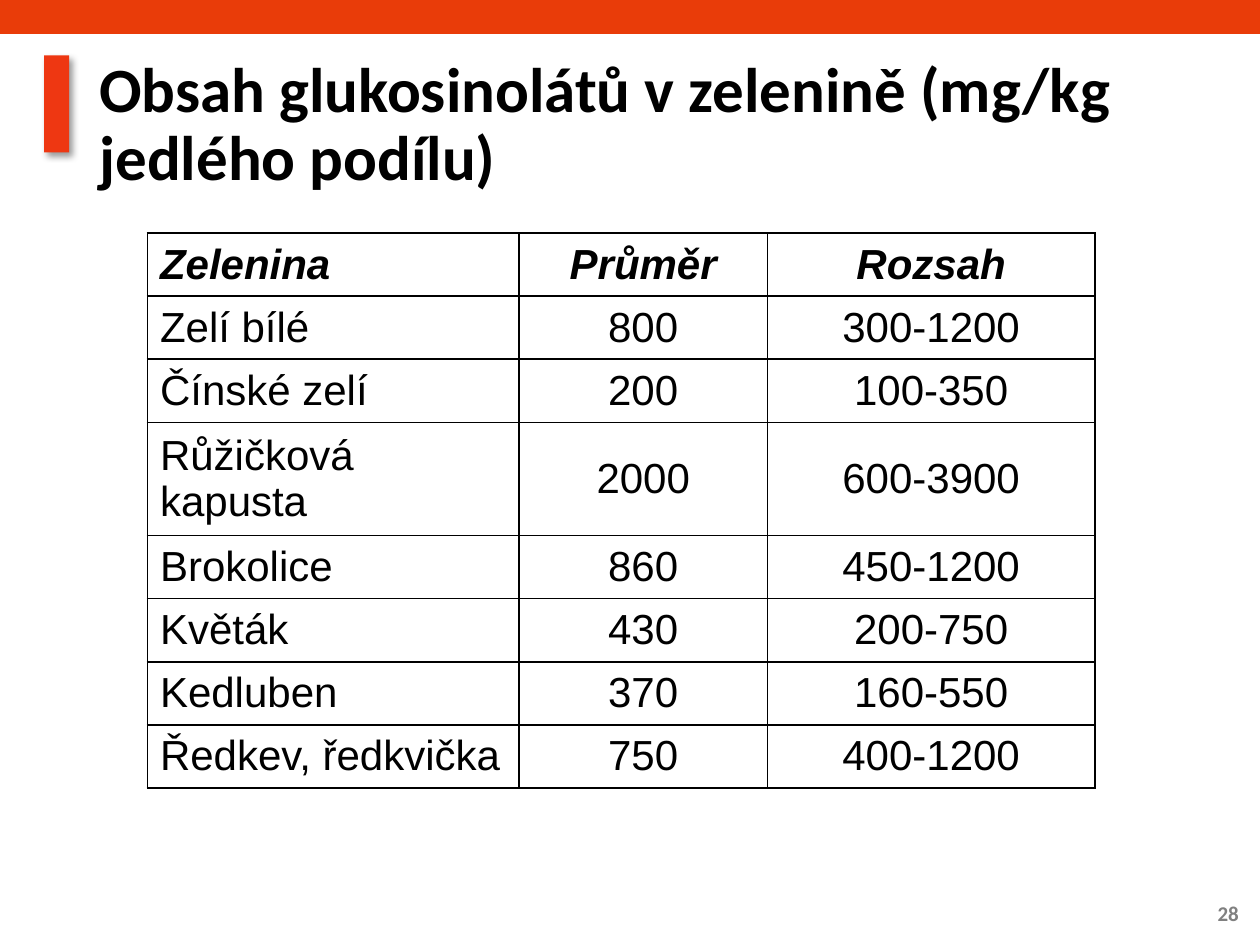
from lxml import etree
from pptx import Presentation
from pptx import util as u
from pptx.dml.color import RGBColor
from pptx.enum import shapes, text
from pptx.oxml import parse_xml
from pptx.oxml.ns import nsdecls, qn

COLORS = {"band": "E93C09", "marker": "EE3712", "ink": "000000", "page": "808080"}
COLS, ROWS = 100, 75
TITLE = {"name": "Calibri", "size": u.Pt(36), "bold": True}
PAGE = {"name": "Calibri", "size": u.Pt(12), "bold": True}
BODY = {"name": "Arial", "size": u.Pt(24), "bold": False, "italic": False}
HEAD = {**BODY, "bold": True, "italic": True}
LEFT, CENTER, RIGHT = text.PP_ALIGN.LEFT, text.PP_ALIGN.CENTER, text.PP_ALIGN.RIGHT

VEGETABLES = [
    ("Zelenina", "Průměr", "Rozsah"),
    ("Zelí bílé", "800", "300-1200"),
    ("Čínské zelí", "200", "100-350"),
    ("Růžičková kapusta", "2000", "600-3900"),
    ("Brokolice", "860", "450-1200"),
    ("Květák", "430", "200-750"),
    ("Kedluben", "370", "160-550"),
    ("Ředkev, ředkvička", "750", "400-1200"),
]


class Deck:
    """Hold the style and current slide, measured in grid columns and rows."""

    def __init__(self):
        self.prs = Presentation()
        self.prs.slide_width, self.prs.slide_height = u.Inches(10), u.Inches(7.5)
        self.s = self.prs.slides.add_slide(self.prs.slide_layouts[6])

    def x(self, cols):
        return round(self.prs.slide_width * cols / COLS)

    def y(self, rows):
        return round(self.prs.slide_height * rows / ROWS)

    def box(self, left, top, width, height):
        return self.x(left), self.y(top), self.x(width), self.y(height)

    def add_words(self, tf, words, font, color="ink", align=LEFT, spacing=1.0):
        p = tf.paragraphs[0]
        p.alignment, p.line_spacing = align, spacing
        r = p.add_run()
        r.text = words
        for key, value in font.items():
            setattr(r.font, key, value)
        r.font.color.rgb = RGBColor.from_string(COLORS[color])

    def bar(self, area, color, shadow=False):
        sp = self.s.shapes.add_shape(shapes.MSO_SHAPE.RECTANGLE, *self.box(*area))
        sp.fill.solid()
        sp.fill.fore_color.rgb = RGBColor.from_string(COLORS[color])
        sp.line.fill.background()
        sp.shadow.inherit = False
        if shadow:
            effects = sp._element.spPr.find(qn("a:effectLst"))
            effects.append(parse_xml(
                f'<a:outerShdw {nsdecls("a")} blurRad="{u.Pt(4)}" dist="{u.Pt(3)}" '
                f'dir="{45 * 60000}" algn="tl" rotWithShape="0">'
                f'<a:srgbClr val="{COLORS["ink"]}"><a:alpha val="40000"/></a:srgbClr>'
                '</a:outerShdw>'))

    def label(self, area, words, font, **style):
        tf = self.s.shapes.add_textbox(*self.box(*area)).text_frame
        tf.word_wrap = True
        tf.vertical_anchor = text.MSO_ANCHOR.MIDDLE
        self.add_words(tf, words, font, **style)

    def border(self, cell):
        tc_pr = cell._tc.get_or_add_tcPr()
        for i, side in enumerate(("lnL", "lnR", "lnT", "lnB")):
            ln = etree.Element(qn(f"a:{side}"), w=str(u.Pt(1)))
            fill = etree.SubElement(ln, qn("a:solidFill"))
            etree.SubElement(fill, qn("a:srgbClr"), val=COLORS["ink"])
            tc_pr.insert(i, ln)

    def table(self, left, top, widths, heights, rows):
        area = self.box(left, top, sum(widths), sum(heights))
        table = self.s.shapes.add_table(len(rows), len(widths), *area).table
        table.first_row = table.horz_banding = False
        for col, width in zip(table.columns, widths):
            col.width = self.x(width)
        for i, (row, height) in enumerate(zip(table.rows, heights)):
            row.height = self.y(height)
            for j, cell in enumerate(row.cells):
                cell.fill.background()
                cell.vertical_anchor = text.MSO_ANCHOR.MIDDLE
                self.add_words(cell.text_frame, rows[i][j], BODY if i else HEAD,
                               align=CENTER if j else LEFT)
                self.border(cell)


def main():
    deck = Deck()
    deck.bar((0, 0, COLS, 2.7), "band")
    deck.bar((3.5, 4.4, 2, 7.7), "marker", shadow=True)
    deck.label((92.5, 70.5, 6.8, 4), "28", PAGE, color="page", align=RIGHT)
    heights = [9 if row[0] == "Růžičková kapusta" else 5 for row in VEGETABLES]
    deck.table(11.7, 18.5, (29.5, 19.7, 26), heights, VEGETABLES)
    deck.label((6.9, 4, 90.5, 12), "Obsah glukosinolátů v zelenině (mg/kg jedlého podílu)",
               TITLE, spacing=0.9)
    deck.prs.save("out.pptx")


if __name__ == "__main__":
    main()
